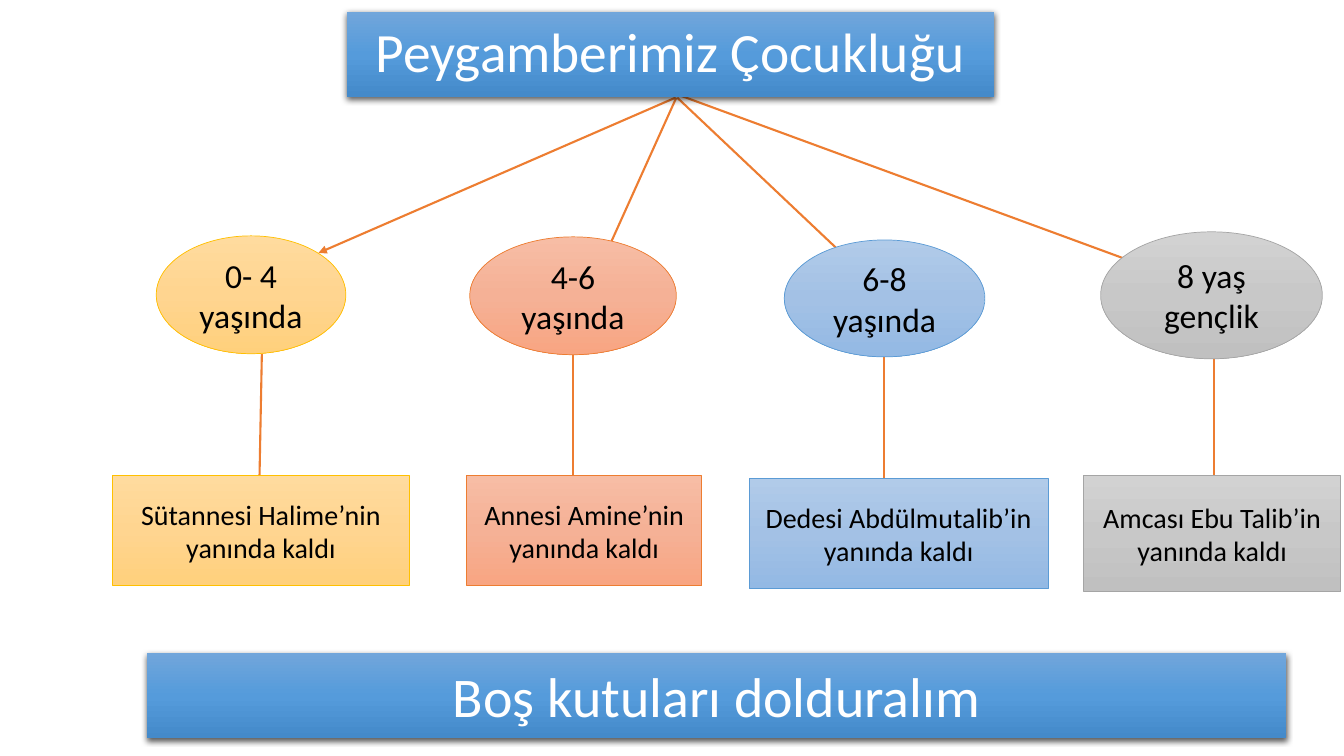
import copy
from dataclasses import dataclass
from typing import Optional

import lxml.etree
import pptx
import pptx.dml.color
import pptx.enum.shapes
import pptx.enum.text
import pptx.oxml.ns
import pptx.util

Pt = pptx.util.Pt
qn = pptx.oxml.ns.qn
SHAPE = pptx.enum.shapes.MSO_SHAPE

COLORS = {
    "arrow": "ED7D31", "light": "FFFFFF", "dark": "000000", "shadow": "000000",
    "gold": "FFC000", "orange": "ED7D31", "blue": "5B9BD5", "gray": "A5A5A5",
    "gold_top": "FFDB9E", "gold_mid": "FFD590", "gold_end": "FFD07C",
    "orange_top": "F7BDA5", "orange_mid": "F5B196", "orange_end": "F8A582",
    "blue_top": "B1CBE9", "blue_mid": "A3C1E5", "blue_end": "93B9E4",
    "gray_top": "D2D2D2", "gray_mid": "C8C8C8", "gray_end": "C0C0C0",
    "banner_top": "71A6DB", "banner_mid": "559BDB", "banner_end": "448ACA",
}

Box = tuple[float, float, float, float]  # left, top, width, height
Span = tuple[float, float, float, float]  # from x, y, to x, y


@dataclass
class Panel:
    text: str
    box: Box
    palette: str
    size: float
    preset: int = SHAPE.RECTANGLE
    ink: str = "dark"
    outline: Optional[str] = None
    shadow: bool = False
    spacing: float = 1.0


@dataclass
class Stage:
    palette: str
    age: str
    age_box: Box
    guardian: str
    guardian_box: Box
    spoke: Span
    drop: Span


STAGES = [
    Stage("gold", "0- 4 yaşında", (111.6, 168.5, 135.4, 84.2),
          "Sütannesi Halime’nin yanında kaldı", (80.6, 339.8, 211.7, 78.5),
          (482.4, 69.8, 227.5, 180.7), (187.9, 208.8, 184.3, 396.7)),
    Stage("orange", "4-6 yaşında", (335.5, 169.2, 147.6, 84.2),
          "Annesi Amine’nin yanında kaldı", (333.4, 339.8, 167.8, 78.5),
          (483.1, 69.8, 426.2, 195.8), (409, 238.3, 409, 396.7)),
    Stage("blue", "6-8 yaşında", (560.2, 171.4, 143.3, 83.5),
          "Dedesi Abdülmutalib’in\nyanında kaldı", (535, 342, 213.8, 78.5),
          (483.8, 69.8, 603.4, 182.9), (631.4, 233.3, 631.4, 391.7)),
    Stage("gray", "8 yaş gençlik", (786.2, 165.6, 158.4, 90.7),
          "Amcası Ebu Talib’in yanında kaldı", (774, 339.8, 183.6, 82.8),
          (476.6, 64.8, 815.8, 189.4), (866.9, 233.3, 866.9, 391.7)),
]
TITLE = Panel("Peygamberimiz Çocukluğu", (247.7, 8.6, 462.2, 60.5), "banner",
              39.6, ink="light", shadow=True, spacing=0.9)
TASK = Panel("Boş kutuları dolduralım", (105.1, 466.6, 813.6, 60.5), "banner",
             40, ink="light", shadow=True)


def rgb(name: str) -> pptx.dml.color.RGBColor:
    return pptx.dml.color.RGBColor.from_string(COLORS[name])


def fill_gradient(shape, palette: str) -> None:
    shape.fill.gradient()
    shape.fill.gradient_angle = 270
    stop_list = shape._element.spPr.find(".//" + qn("a:gsLst"))
    stop_list.insert(1, copy.deepcopy(stop_list[0]))
    parts = zip(shape.fill.gradient_stops, ("top", "mid", "end"), (0, 0.5, 1))
    for stop, part, position in parts:
        stop.color.rgb = rgb(f"{palette}_{part}")
        stop.position = position


def add_shadow(shape) -> None:
    effects = shape._element.spPr.find(qn("a:effectLst"))
    outer = lxml.etree.SubElement(
        effects, qn("a:outerShdw"), blurRad=str(Pt(4.5)), dist=str(Pt(1.5)),
        dir="5400000", algn="ctr", rotWithShape="0")
    color = lxml.etree.SubElement(outer, qn("a:srgbClr"), val=COLORS["shadow"])
    lxml.etree.SubElement(color, qn("a:alpha"), val="63000")


def draw_panel(slide, panel: Panel) -> None:
    shape = slide.shapes.add_shape(panel.preset, *map(Pt, panel.box))
    shape.shadow.inherit = False
    fill_gradient(shape, panel.palette)
    if panel.shadow:
        add_shadow(shape)
    if panel.outline:
        shape.line.color.rgb = rgb(panel.outline)
        shape.line.width = Pt(0.5)
    else:
        shape.line.fill.background()

    frame = shape.text_frame
    frame.word_wrap = True
    frame.vertical_anchor = pptx.enum.text.MSO_ANCHOR.MIDDLE
    frame.text = panel.text
    for paragraph in frame.paragraphs:
        paragraph.alignment = pptx.enum.text.PP_ALIGN.CENTER
        paragraph.line_spacing = panel.spacing
        paragraph.font.name = "Calibri"
        paragraph.font.size = Pt(panel.size)
        paragraph.font.color.rgb = rgb(panel.ink)


def draw_arrow(slide, span: Span) -> None:
    arrow = slide.shapes.add_connector(
        pptx.enum.shapes.MSO_CONNECTOR.STRAIGHT, *map(Pt, span))
    arrow.line.color.rgb = rgb("arrow")
    arrow.line.width = Pt(1.5)
    properties = arrow._element.spPr
    lxml.etree.SubElement(properties.find(qn("a:ln")), qn("a:tailEnd"), type="triangle")
    lxml.etree.SubElement(properties, qn("a:effectLst"))


def main() -> None:
    deck = pptx.Presentation()
    deck.slide_width, deck.slide_height = Pt(960), Pt(540)
    slide = deck.slides.add_slide(deck.slide_layouts[6])

    # Title over the arrows that fan out from it
    for stage in reversed(STAGES):
        draw_arrow(slide, stage.spoke)
    draw_panel(slide, TITLE)

    # Arrows from each age to its guardian, tucked behind both
    for stage in STAGES:
        draw_arrow(slide, stage.drop)

    # Ages and guardians
    for stage in STAGES:
        draw_panel(slide, Panel(stage.age, stage.age_box, stage.palette, 24,
                                preset=SHAPE.OVAL, outline=stage.palette))
        draw_panel(slide, Panel(stage.guardian, stage.guardian_box, stage.palette,
                                20, outline=stage.palette))

    # Task banner
    draw_panel(slide, TASK)
    deck.save("out.pptx")


if __name__ == "__main__":
    main()
